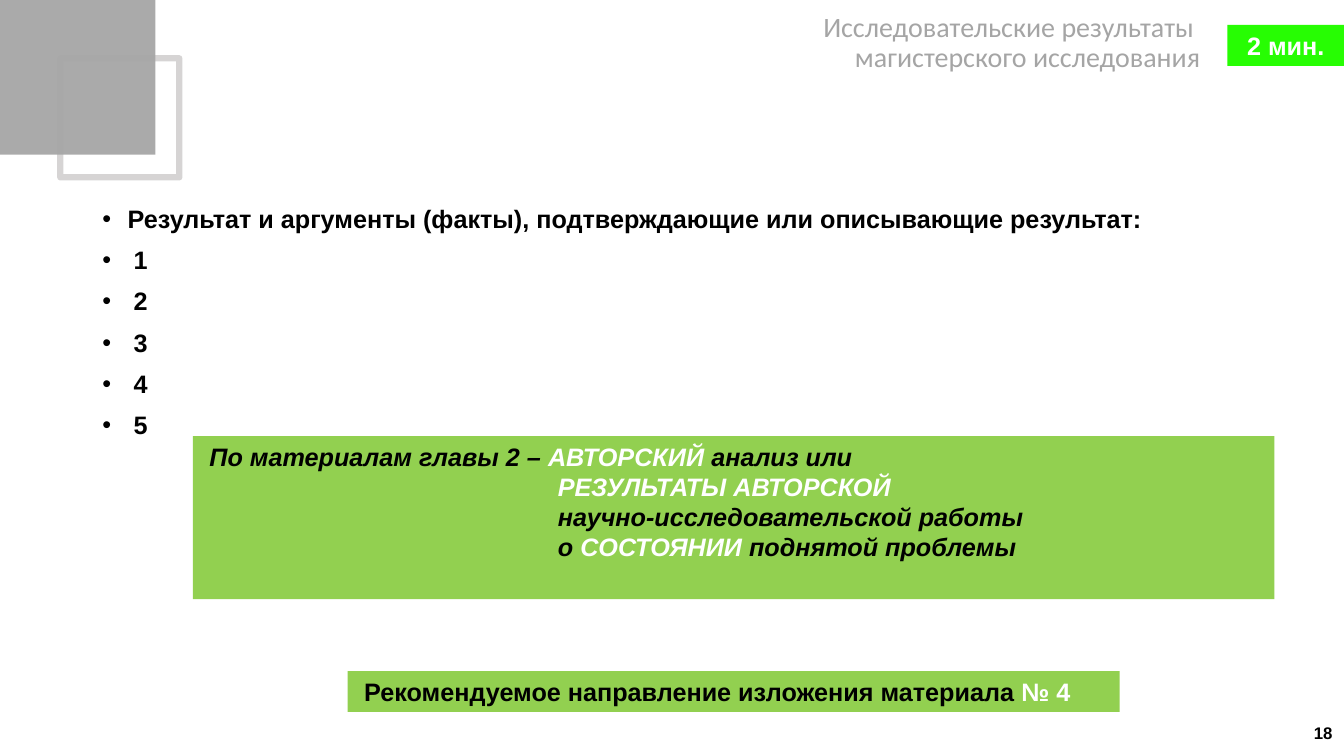
from lxml import etree
from pptx import Presentation
from pptx import util as u
from pptx.dml.color import RGBColor
from pptx.enum import shapes, text
from pptx.oxml.ns import qn

COLORS = {
    "black": "000000",
    "white": "FFFFFF",
    "green": "92D050",
    "lime": "27FD03",
    "title": "A5A5A5",
    "square": "A6A6A6",
    "frame": "AFABAB",
}


def rgb(name):
    return RGBColor.from_string(COLORS[name])


def set_opacity(color_format_parent, percent):
    """Make the solid colour below the given XML element partly transparent."""
    color = color_format_parent.find(".//" + qn("a:srgbClr"))
    etree.SubElement(color, qn("a:alpha")).set("val", str(percent * 1000))


class SlideBuilder:
    """Holds the text style and the slide being filled."""

    font_name = "Arial"
    font_size = 18

    def __init__(self, presentation):
        self.slide = presentation.slides.add_slide(presentation.slide_layouts[5])

    def format_run(self, run, color="black", size=None, name=None, bold=True, italic=False):
        run.font.name = name or self.font_name
        run.font.size = u.Pt(size or self.font_size)
        run.font.bold = bold
        run.font.italic = italic
        run.font.color.rgb = rgb(color)

    def rectangle(self, left, top, width, height, fill=None):
        shape = self.slide.shapes.add_shape(
            shapes.MSO_SHAPE.RECTANGLE, u.Cm(left), u.Cm(top), u.Cm(width), u.Cm(height))
        shape.shadow.inherit = False
        shape.line.fill.background()
        if fill:
            shape.fill.solid()
            shape.fill.fore_color.rgb = rgb(fill)
        else:
            shape.fill.background()
        return shape

    def frame(self, left, top, side):
        shape = self.rectangle(left, top, side, side)
        shape.line.color.rgb = rgb("frame")
        shape.line.width = u.Pt(4.5)
        set_opacity(shape.line._ln, 50)

    def square(self, left, top, side):
        shape = self.rectangle(left, top, side, side, "square")
        set_opacity(shape._element.spPr, 95)

    def title(self, content, left, top, width, height):
        shape = self.slide.shapes.title
        shape.left, shape.top = u.Cm(left), u.Cm(top)
        shape.width, shape.height = u.Cm(width), u.Cm(height)
        frame = shape.text_frame
        frame.margin_left = frame.margin_right = frame.margin_top = frame.margin_bottom = 0
        frame.vertical_anchor = text.MSO_ANCHOR.TOP
        frame.auto_size = text.MSO_AUTO_SIZE.NONE
        frame.text = content
        for paragraph in frame.paragraphs:
            paragraph.alignment = text.PP_ALIGN.RIGHT
            paragraph.line_spacing = 0.9
            for run in paragraph.runs:
                self.format_run(run, "title", 20, "Calibri", bold=False)

    def text_box(self, left, top, width, height):
        frame = self.slide.shapes.add_textbox(
            u.Cm(left), u.Cm(top), u.Cm(width), u.Cm(height)).text_frame
        frame.word_wrap = True
        return frame

    def bullets(self, items, left, top, width, height):
        """Add a bulleted list from (text, hanging indent in cm) pairs."""
        frame = self.text_box(left, top, width, height)
        frame.text = "\n".join(content for content, _ in items)
        for index, (paragraph, (_, indent)) in enumerate(zip(frame.paragraphs, items)):
            properties = paragraph._p.get_or_add_pPr()
            properties.set("marL", str(u.Cm(indent)))
            properties.set("indent", str(-u.Cm(indent)))
            etree.SubElement(properties, qn("a:buFont")).set("typeface", "Arial")
            etree.SubElement(properties, qn("a:buChar")).set("char", "•")
            paragraph.line_spacing = 0.9
            if index:
                paragraph.space_before = u.Pt(10)
            self.format_run(paragraph.runs[0])

    def label(self, lines, left, top, width, height, fill, italic=False,
              align=text.PP_ALIGN.LEFT):
        """Add a filled box; each line is (indent in cm, [(text, colour), ...])."""
        frame = self.rectangle(left, top, width, height, fill).text_frame
        frame.word_wrap = True
        frame.vertical_anchor = text.MSO_ANCHOR.TOP
        for index, (indent, parts) in enumerate(lines):
            paragraph = frame.add_paragraph() if index else frame.paragraphs[0]
            paragraph.alignment = align
            paragraph._p.get_or_add_pPr().set("marL", str(u.Cm(indent)))
            for content, color in parts:
                run = paragraph.add_run()
                run.text = content
                self.format_run(run, color, italic=italic)

    def page_number(self, number, left, top, width, height):
        frame = self.text_box(left, top, width, height)
        frame.vertical_anchor = text.MSO_ANCHOR.MIDDLE
        frame.text = number
        frame.paragraphs[0].alignment = text.PP_ALIGN.RIGHT
        self.format_run(frame.paragraphs[0].runs[0], size=12)


def main():
    presentation = Presentation()
    presentation.slide_width, presentation.slide_height = u.Cm(33.87), u.Cm(19.05)
    builder = SlideBuilder(presentation)

    builder.frame(1.52, 1.47, 3)
    builder.square(0, -0.02, 3.92)
    builder.title("Исследовательские результаты \nмагистерского исследования",
                  3.17, 0.33, 27.08, 1.78)

    heading = "Результат и аргументы (факты), подтверждающие или описывающие результат:"
    numbers = [(str(number), 0.79) for number in range(1, 6)]
    builder.bullets([(heading, 0.64)] + numbers, 2.33, 5.08, 29.21, 12.09)

    small_indent, deep_indent = 0.17, 8.95
    builder.label([
        (small_indent, [("По материалам главы 2 – ", "black"), ("АВТОРСКИЙ", "white"),
                        (" анализ или", "black")]),
        (deep_indent, [("РЕЗУЛЬТАТЫ АВТОРСКОЙ", "white")]),
        (deep_indent, [("научно-исследовательской работы", "black")]),
        (deep_indent, [("о ", "black"), ("СОСТОЯНИИ", "white"),
                       (" поднятой проблемы", "black")]),
    ], 4.86, 10.99, 27.26, 4.11, "green", italic=True)

    builder.label([(0, [("2 мин.", "white")])], 30.93, 0.63, 2.95, 1.03, "lime",
                  align=text.PP_ALIGN.CENTER)
    builder.label([
        (small_indent, [("Рекомендуемое направление изложения материала ", "black"),
                        ("№ 4", "white")]),
    ], 8.76, 16.91, 19.46, 1.03, "green")
    builder.page_number("18", 25.93, 17.95, 7.9, 1.01)

    presentation.save("out.pptx")


if __name__ == "__main__":
    main()
